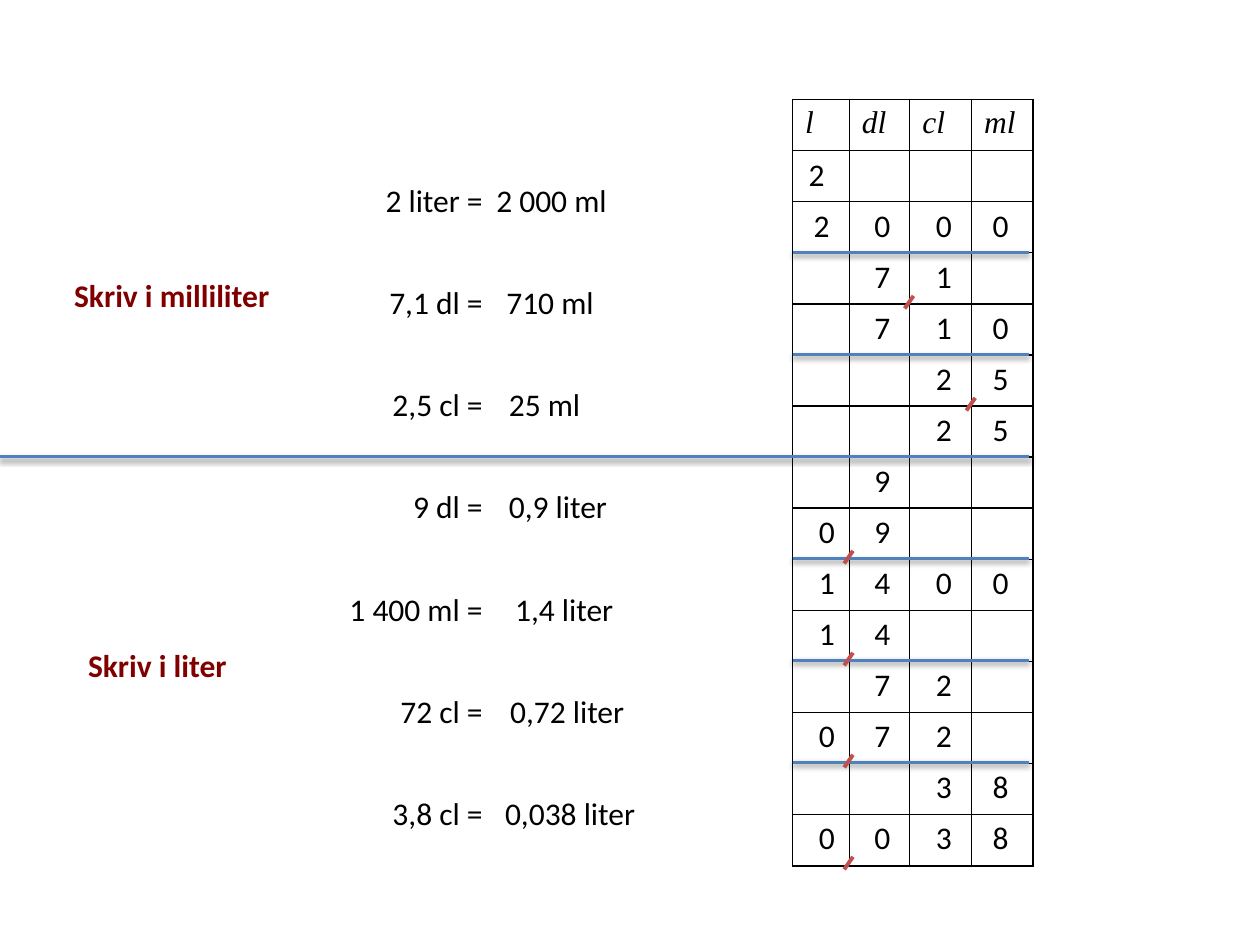
from lxml import etree
from pptx import Presentation
from pptx.dml.color import RGBColor
from pptx.enum import shapes, text
from pptx.oxml import ns
from pptx.util import Inches, Pt

# Content: a comma in a row marks the decimal sign after the unit before it
UNITS = ["l", "dl", "cl", "ml"]
DIGIT_ROWS = [
    "2   ", "2000",
    " 7,1 ", " 710",
    "  2,5", "  25",
    " 9  ", "0,9  ",
    "1400", "1,4  ",
    " 72 ", "0,72 ",
    "  38", "0,038",
]
EXERCISES = [  # question, answer, left edge of the answer
    ("2 liter =", "2 000 ml", 3.84),
    ("7,1 dl =", "710 ml", 3.92),
    ("2,5 cl =", "25 ml", 3.94),
    ("9 dl =", "0,9 liter", 3.94),
    ("1 400 ml =", "1,4 liter", 3.99),
    ("72 cl =", "0,72 liter", 3.95),
    ("3,8 cl =", "0,038 liter", 3.91),
]
HEADINGS = [("Skriv i milliliter", 0.49, 2.14, 1.77), ("Skriv i liter", 0.6, 5.08, 1.32)]

COLORS = {"text": "000000", "heading": "800000", "rule": "4F81BD",
          "comma": "C0504D", "cell": "FFFFFF"}

# Layout in inches
TABLE_LEFT, TABLE_TOP, TABLE_HEIGHT = 6.29, 0.79, 6.07
COLUMN_WIDTHS = [0.45, 0.48, 0.49, 0.49]
ROW_HEIGHT = TABLE_HEIGHT / (len(DIGIT_ROWS) + 1)
COLUMN_EDGES = [TABLE_LEFT + sum(COLUMN_WIDTHS[:i]) for i in range(5)]
DIGIT_LEFTS = [6.4, 6.84, 7.33, 7.78]
FIRST_ROW_SHIFTS = {0: -0.08, 1: -0.04}  # the litre digit of the first exercise
RULE_RIGHT, MIDDLE_RULE = 8.17, 3
EXERCISE_TOP, EXERCISE_STEP = 1.39, 0.81
QUESTION_LEFT, QUESTION_WIDTH = 2.63, 1.3

presentation = Presentation()
presentation.slide_width, presentation.slide_height = Inches(10), Inches(7.5)
slide = presentation.slides.add_slide(presentation.slide_layouts[6])


def write(paragraph, words, font="Calibri", color="text", bold=False, italic=False):
    run = paragraph.add_run()
    run.text = words
    run.font.name, run.font.size = font, Pt(18)
    run.font.bold, run.font.italic = bold, italic
    run.font.color.rgb = RGBColor.from_string(COLORS[color])


def add_text(words, left, top, width, wrap=False, align=text.PP_ALIGN.LEFT, **style):
    box = slide.shapes.add_textbox(Inches(left), Inches(top), Inches(width), Inches(0.4))
    box.text_frame.word_wrap = wrap
    paragraph = box.text_frame.paragraphs[0]
    paragraph.alignment = align
    write(paragraph, words, **style)


def add_line(x1, y1, x2, y2, color, width, shadow=False):
    line = slide.shapes.add_connector(
        shapes.MSO_CONNECTOR.STRAIGHT, Inches(x1), Inches(y1), Inches(x2), Inches(y2))
    line.line.color.rgb = RGBColor.from_string(COLORS[color])
    line.line.width = Pt(width)
    effects = etree.SubElement(line._element.spPr, ns.qn("a:effectLst"))
    if shadow:
        outer = etree.SubElement(effects, ns.qn("a:outerShdw"), blurRad=str(Pt(3.1)),
                                 dist=str(Pt(1.6)), dir="5400000", rotWithShape="0")
        black = etree.SubElement(outer, ns.qn("a:srgbClr"), val="000000")
        etree.SubElement(black, ns.qn("a:alpha"), val="38000")


def format_cell(cell):
    cell.fill.solid()
    cell.fill.fore_color.rgb = RGBColor.from_string(COLORS["cell"])
    properties = cell._tc.get_or_add_tcPr()
    for position, side in enumerate(["lnL", "lnR", "lnT", "lnB"]):
        border = etree.Element(ns.qn("a:" + side), w=str(Pt(1)))
        fill = etree.SubElement(border, ns.qn("a:solidFill"))
        etree.SubElement(fill, ns.qn("a:srgbClr"), val=COLORS["text"])
        properties.insert(position, border)


# Unit table
table = slide.shapes.add_table(
    len(DIGIT_ROWS) + 1, len(UNITS), Inches(TABLE_LEFT), Inches(TABLE_TOP),
    Inches(sum(COLUMN_WIDTHS)), Inches(TABLE_HEIGHT)).table
table.first_row = table.horz_banding = False
for column, width in zip(table.columns, COLUMN_WIDTHS):
    column.width = Inches(width)
for row in table.rows:
    row.height = Inches(ROW_HEIGHT)
for cell in table.iter_cells():
    format_cell(cell)
for index, unit in enumerate(UNITS):
    write(table.cell(0, index).text_frame.paragraphs[0], unit,
          font="Times New Roman", italic=True)

# Rules between the exercises; the middle one spans both halves
for number in range(1, len(EXERCISES)):
    y = TABLE_TOP + (2 * number + 1) * ROW_HEIGHT
    left = 0 if number == MIDDLE_RULE else TABLE_LEFT
    add_line(left, y, RULE_RIGHT, y, "rule", 2, shadow=True)

# Digits and decimal commas
for index, digits in enumerate(DIGIT_ROWS):
    top = TABLE_TOP + (index + 1) * ROW_HEIGHT - 0.01
    column = 0
    for sign in digits:
        if sign == ",":
            x, y = COLUMN_EDGES[column], top + ROW_HEIGHT
            add_line(x + 0.03, y - 0.05, x - 0.04, y + 0.05, "comma", 2.25)
            continue
        if sign != " ":
            shift = FIRST_ROW_SHIFTS.get(index, 0) if column == 0 else 0
            add_text(sign, DIGIT_LEFTS[column] + shift, top, 0.29, wrap=True)
        column += 1

# Exercises and headings
for index, (question, answer, answer_left) in enumerate(EXERCISES):
    top = EXERCISE_TOP + index * EXERCISE_STEP
    add_text(question, QUESTION_LEFT, top, QUESTION_WIDTH, wrap=True,
             align=text.PP_ALIGN.RIGHT)
    add_text(answer, answer_left, top, 1.25, wrap=True)
for words, left, top, width in HEADINGS:
    add_text(words, left, top, width, color="heading", bold=True)

presentation.save("out.pptx")
